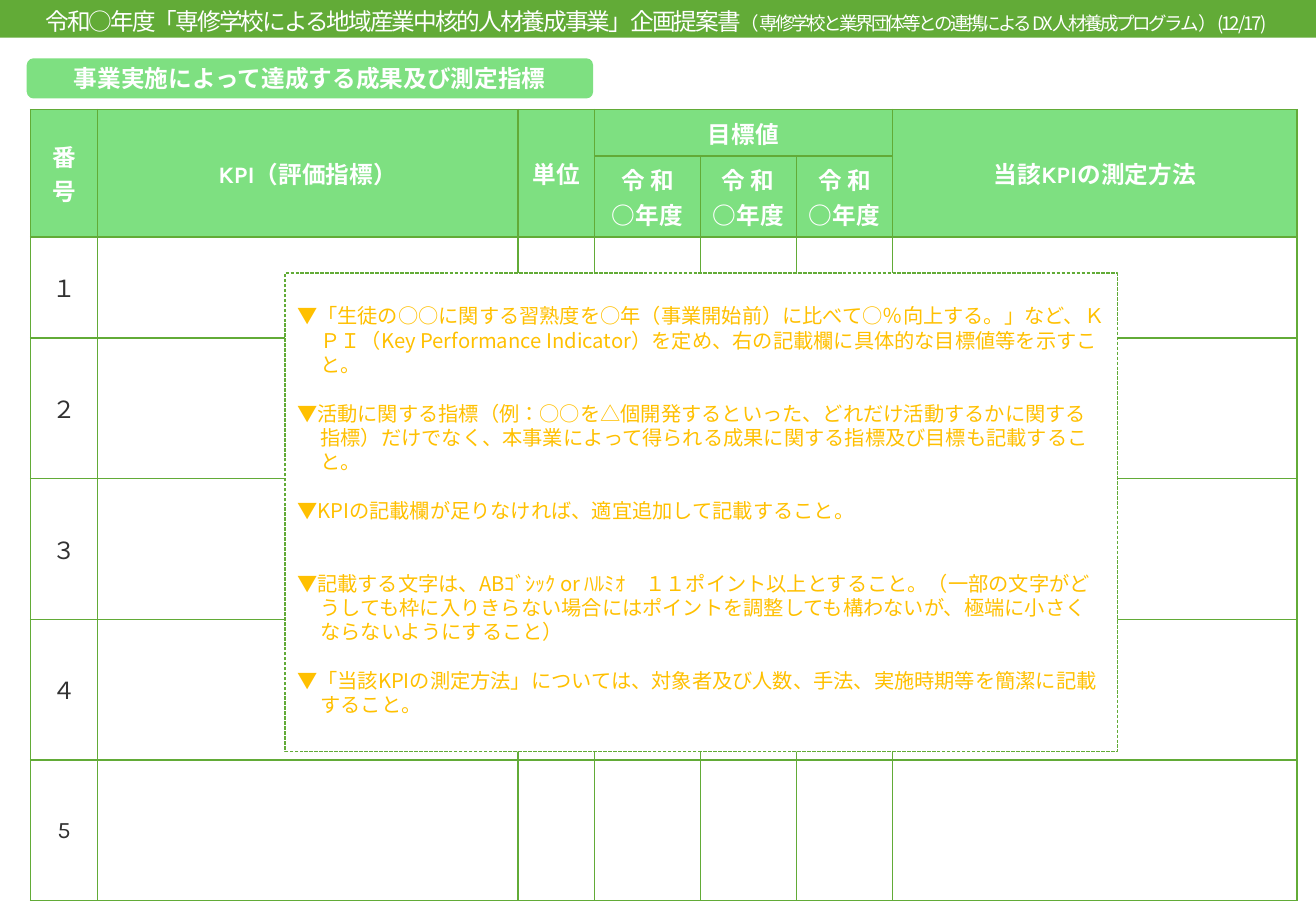
from dataclasses import dataclass

import pptx
import pptx.dml.color
import pptx.enum.dml
import pptx.enum.lang
import pptx.enum.shapes
import pptx.enum.text
import pptx.oxml
import pptx.oxml.ns
import pptx.util
from pptx.util import Cm

GREEN = "62AB37"
LIGHT_GREEN = "7EE081"
WHITE = "FFFFFF"
DARK = "323232"
AMBER = "FFC000"
KARLA = "Karla"
NOTO = "Noto Sans CJK JP"
LINE_PITCH = 14.4


@dataclass(frozen=True)
class Box:
    left: float
    top: float
    width: float
    height: float


@dataclass(frozen=True)
class HeaderCell:
    row: int
    column: int
    lines: tuple[str, ...]
    last_row: int
    last_column: int
    font: str = KARLA


@dataclass(frozen=True)
class TitleRun:
    text: str
    size: float
    spacing: float


@dataclass(frozen=True)
class Note:
    text: str
    space_after: float = LINE_PITCH


COLUMN_WIDTHS = (1.4, 8.79, 1.6, 2.21, 2.01, 2.01, 8.46)
ROW_HEIGHTS = (0.97, 1.45, 2.11) + (2.94,) * 4
ROW_NUMBERS = ("１", "２", "３", "４", "5")
YEAR_LINES = ("令 和", "○年度")

HEADER_CELLS = [
    HeaderCell(0, 0, ("番号",), 1, 0),
    HeaderCell(0, 1, ("KPI（評価指標）",), 1, 1),
    HeaderCell(0, 2, ("単位",), 1, 2),
    HeaderCell(0, 3, ("目標値",), 0, 5),
    HeaderCell(0, 6, ("当該KPIの測定方法",), 1, 6),
] + [HeaderCell(1, column, YEAR_LINES, 1, column, NOTO) for column in (3, 4, 5)]

TITLE_RUNS = [
    TitleRun("令和○年度「専修学校による地域産業中核的人材養成事業」企画提案書", 14, -1.2),
    TitleRun("（", 11, -1.2),
    TitleRun("専修学校と業界団体等との連携によるDX人材養成プログラム", 11, -1.6),
    TitleRun("）(12/17)", 11, -1.2),
]

NOTES = [
    Note("▼「生徒の○○に関する習熟度を○年（事業開始前）に比べて○％向上する。」など、ＫＰＩ（Key Performance Indicator）を定め、右の記載欄に具体的な目標値等を示すこと。"),
    Note("▼活動に関する指標（例：○○を△個開発するといった、どれだけ活動するかに関する指標）だけでなく、本事業によって得られる成果に関する指標及び目標も記載すること。"),
    Note("▼KPIの記載欄が足りなければ、適宜追加して記載すること。", 2 * LINE_PITCH),
    Note("▼記載する文字は、ABｺﾞｼｯｸ or ﾊﾙﾐｵ　１１ポイント以上とすること。（一部の文字がどうしても枠に入りきらない場合にはポイントを調整しても構わないが、極端に小さくならないようにすること）"),
    Note("▼「当該KPIの測定方法」については、対象者及び人数、手法、実施時期等を簡潔に記載すること。", 0),
]


def rgb(value: str) -> pptx.dml.color.RGBColor:
    return pptx.dml.color.RGBColor.from_string(value)


def add_text(paragraph, text: str, *, size: float = 14, font: str = KARLA,
             color: str = WHITE, bold: bool = False, spacing: float = 0,
             centered: bool = True) -> None:
    alignment = pptx.enum.text.PP_ALIGN
    paragraph.alignment = alignment.CENTER if centered else alignment.LEFT
    run = paragraph.add_run()
    run.text = text
    run.font.size = pptx.util.Pt(size)
    run.font.name = font
    run.font.bold = bold
    run.font.color.rgb = rgb(color)
    run.font.language_id = pptx.enum.lang.MSO_LANGUAGE_ID.JAPANESE
    properties = run.font._element
    if spacing:
        properties.set("spc", str(round(spacing * 100)))
    east_asian = pptx.oxml.parse_xml(
        f'<a:ea {pptx.oxml.ns.nsdecls("a")} typeface="{NOTO}"/>')
    properties.find(pptx.oxml.ns.qn("a:latin")).addnext(east_asian)


def add_box(slide, kind, box: Box, fill: str):
    shape = slide.shapes.add_shape(
        kind, Cm(box.left), Cm(box.top), Cm(box.width), Cm(box.height))
    shape.shadow.inherit = False
    shape.fill.solid()
    shape.fill.fore_color.rgb = rgb(fill)
    shape.line.fill.background()
    shape.text_frame.word_wrap = True
    return shape


def add_borders(cell) -> None:
    properties = cell._tc.get_or_add_tcPr()
    for side in ("lnL", "lnR", "lnT", "lnB"):
        properties.append(pptx.oxml.parse_xml(
            f'<a:{side} {pptx.oxml.ns.nsdecls("a")} w="12700"><a:solidFill>'
            f'<a:srgbClr val="{GREEN}"/></a:solidFill></a:{side}>'))


def add_section_heading(slide) -> None:
    heading = add_box(slide, pptx.enum.shapes.MSO_SHAPE.ROUNDED_RECTANGLE,
                      Box(0.56, 1.22, 11.84, 0.84), LIGHT_GREEN)
    heading.text_frame.vertical_anchor = pptx.enum.text.MSO_ANCHOR.MIDDLE
    add_text(heading.text_frame.paragraphs[0],
             "事業実施によって達成する成果及び測定指標", bold=True)


def add_indicator_table(slide) -> None:
    table = slide.shapes.add_table(
        len(ROW_HEIGHTS), len(COLUMN_WIDTHS), Cm(0.64), Cm(2.29),
        Cm(sum(COLUMN_WIDTHS)), Cm(sum(ROW_HEIGHTS))).table
    table.first_row = False
    table.horz_banding = False
    for column, width in zip(table.columns, COLUMN_WIDTHS):
        column.width = Cm(width)
    for index, (row, height) in enumerate(zip(table.rows, ROW_HEIGHTS)):
        row.height = Cm(height)
        for cell in row.cells:
            add_borders(cell)
            cell.vertical_anchor = pptx.enum.text.MSO_ANCHOR.MIDDLE
            if index < 2:
                cell.fill.solid()
                cell.fill.fore_color.rgb = rgb(LIGHT_GREEN)
            else:
                cell.fill.background()
    for header in HEADER_CELLS:
        cell = table.cell(header.row, header.column)
        last_cell = table.cell(header.last_row, header.last_column)
        if (header.row, header.column) != (header.last_row, header.last_column):
            cell.merge(last_cell)
        frame = cell.text_frame
        for index, line in enumerate(header.lines):
            paragraph = frame.add_paragraph() if index else frame.paragraphs[0]
            add_text(paragraph, line, font=header.font, bold=True)
    for row_index, number in enumerate(ROW_NUMBERS, start=2):
        add_text(table.cell(row_index, 0).text_frame.paragraphs[0], number, color=DARK)


def add_notes_box(slide) -> None:
    notes_box = add_box(slide, pptx.enum.shapes.MSO_SHAPE.RECTANGLE,
                        Box(5.96, 5.71, 17.4, 10.01), WHITE)
    notes_box.line.color.rgb = rgb(GREEN)
    notes_box.line.width = pptx.util.Pt(0.75)
    notes_box.line.dash_style = pptx.enum.dml.MSO_LINE.SQUARE_DOT
    frame = notes_box.text_frame
    frame.vertical_anchor = pptx.enum.text.MSO_ANCHOR.TOP
    frame.margin_top = Cm(0.64)
    for index, note in enumerate(NOTES):
        paragraph = frame.add_paragraph() if index else frame.paragraphs[0]
        paragraph.line_spacing = pptx.util.Pt(LINE_PITCH)
        paragraph.space_after = pptx.util.Pt(note.space_after)
        properties = paragraph._p.get_or_add_pPr()
        properties.set("marL", str(Cm(0.49)))
        properties.set("indent", str(Cm(-0.49)))
        add_text(paragraph, note.text, size=12, font=NOTO, color=AMBER, centered=False)


def add_title_bar(slide) -> None:
    add_box(slide, pptx.enum.shapes.MSO_SHAPE.RECTANGLE, Box(0, 0, 27.51, 0.79), GREEN)
    title = slide.shapes.add_textbox(Cm(0), Cm(0.03), Cm(27.43), Cm(0.86))
    title.text_frame.word_wrap = True
    for run in TITLE_RUNS:
        add_text(title.text_frame.paragraphs[0], run.text, size=run.size,
                 font=NOTO, spacing=run.spacing)


def main() -> None:
    presentation = pptx.Presentation()
    presentation.slide_width = Cm(27.51)
    presentation.slide_height = Cm(19.05)
    slide = presentation.slides.add_slide(presentation.slide_layouts[6])
    add_section_heading(slide)
    add_indicator_table(slide)
    add_notes_box(slide)
    add_title_bar(slide)
    presentation.save("out.pptx")


if __name__ == "__main__":
    main()
